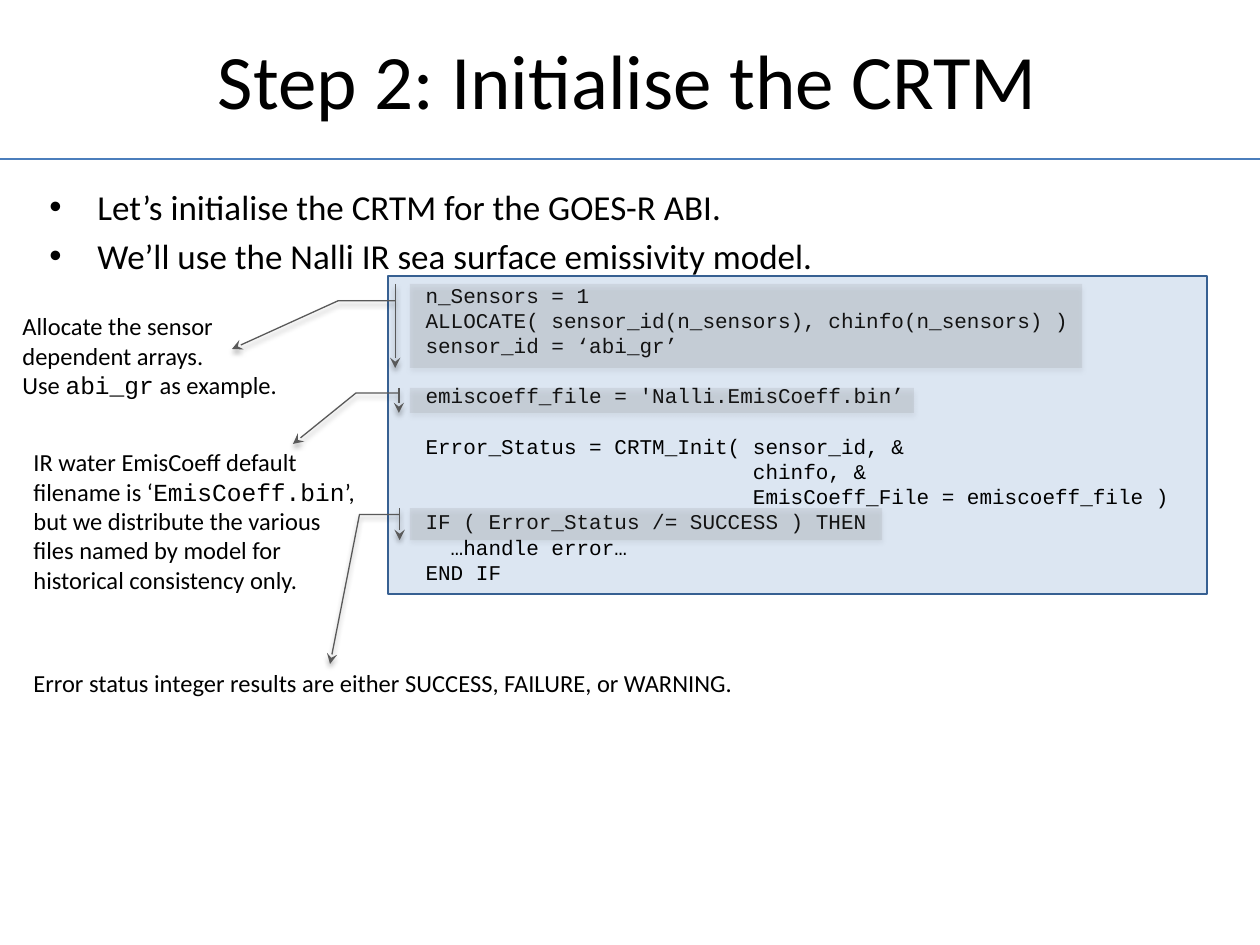
import pptx
import pptx.dml.color
import pptx.enum.shapes
import pptx.enum.text
import pptx.oxml
import pptx.oxml.ns
import pptx.util

SCALE = 914400 / 126
SANS, MONO = "Calibri", "Courier New"
NS = pptx.oxml.ns.nsdecls("a")
SHAPES = pptx.enum.shapes.MSO_SHAPE
ANCHOR = pptx.enum.text.MSO_ANCHOR
ALIGN = pptx.enum.text.PP_ALIGN

CODE = """\
  n_Sensors = 1
  ALLOCATE( sensor_id(n_sensors), chinfo(n_sensors) )
  sensor_id = ‘abi_gr’

  emiscoeff_file = 'Nalli.EmisCoeff.bin’

  Error_Status = CRTM_Init( sensor_id, &
                            chinfo, &
                            EmisCoeff_File = emiscoeff_file )
  IF ( Error_Status /= SUCCESS ) THEN
    …handle error…
  END IF"""
CODE_PITCH = 14.4

BULLETS = [
    "Let’s initialise the CRTM for the GOES-R ABI.",
    "We’ll use the Nalli IR sea surface emissivity model.",
]

NOTES = [
    ((410, 508, 472, 32), (330, 664), (21, 662, 735, 53),
     [[("Error status integer results are either SUCCESS, FAILURE, or WARNING.", SANS)]]),
    ((410, 284, 672, 84), (232, 349), (10, 305, 284, 116),
     [[("Allocate the sensor dependent arrays.", SANS)],
      [("Use ", SANS), ("abi_gr", MONO), (" as example.", SANS)]]),
    ((410, 388, 504, 25), (293, 444), (21, 441, 357, 158),
     [[("IR water EmisCoeff default filename is ‘", SANS), ("EmisCoeff.bin", MONO),
       ("’, but we distribute the various files named by model for historical "
        "consistency only.", SANS)]]),
]


def px(n):
    return pptx.util.Emu(round(n * SCALE))


def color(value):
    return pptx.dml.color.RGBColor.from_string(value)


def add_run(p, text, size, font=SANS):
    r = p.add_run()
    r.text = text
    r.font.size = pptx.util.Pt(size)
    r.font.name = font
    r.font.color.rgb = color("000000")


def next_paragraph(tf, index):
    return tf.add_paragraph() if index else tf.paragraphs[0]


def style_line(line, value, width):
    line.color.rgb = color(value)
    line.width = pptx.util.Pt(width)


def add_textbox(shapes, box):
    tf = shapes.add_textbox(*map(px, box)).text_frame
    tf.word_wrap = True
    return tf


def add_title(s, text):
    sp = s.shapes.title
    sp.left, sp.top, sp.width, sp.height = map(px, (145, 0, 966, 158))
    tf = sp.text_frame
    tf.vertical_anchor = ANCHOR.MIDDLE
    p = tf.paragraphs[0]
    p.alignment = ALIGN.CENTER
    add_run(p, text, 44)


def add_rule(s, y):
    sp = s.shapes.add_connector(
        pptx.enum.shapes.MSO_CONNECTOR.STRAIGHT, px(0), px(y), px(1260), px(y))
    style_line(sp.line, "4B7EBC", 0.75)
    sp._element.spPr.append(pptx.oxml.parse_xml(f"<a:effectLst {NS}/>"))


def add_code(s, box, code):
    sp = s.shapes.add_shape(SHAPES.RECTANGLE, *map(px, box))
    sp.shadow.inherit = False
    sp.fill.solid()
    sp.fill.fore_color.rgb = color("DCE6F2")
    style_line(sp.line, "376092", 1.5)
    tf = sp.text_frame
    tf.word_wrap = True
    tf.vertical_anchor = ANCHOR.TOP
    index = 0
    for block_index, block in enumerate(code.split("\n\n")):
        for line_index, text in enumerate(block.split("\n")):
            p = next_paragraph(tf, index)
            p.alignment = ALIGN.LEFT
            p.line_spacing = pptx.util.Pt(CODE_PITCH)
            if block_index and not line_index:
                p.space_before = pptx.util.Pt(CODE_PITCH)
            add_run(p, text, 12, MONO)
            index += 1


def add_bullets(s, box, items):
    tf = add_textbox(s.shapes, box)
    for index, text in enumerate(items):
        p = next_paragraph(tf, index)
        pPr = p._p.get_or_add_pPr()
        pPr.set("marL", str(px(48)))
        pPr.set("indent", str(px(-48)))
        pPr.append(pptx.oxml.parse_xml(f'<a:buFont {NS} typeface="Arial"/>'))
        pPr.append(pptx.oxml.parse_xml(f'<a:buChar {NS} char="•"/>'))
        if index:
            p.space_before = pptx.util.Pt(4)
        add_run(p, text, 20)


def add_callout(shapes, box, tip):
    x, y, w, h = box
    sp = shapes.add_shape(SHAPES.LINE_CALLOUT_2_ACCENT_BAR, *map(px, box))
    points = (0.2, -0.022, 0.2, -0.107, (tip[1] - y) / h, (tip[0] - x) / w)
    for index, value in enumerate(points):
        sp.adjustments[index] = value
    sp.fill.solid()
    sp.fill.fore_color.rgb = color("808080")
    spPr = sp._element.spPr
    srgb = spPr.find(".//" + pptx.oxml.ns.qn("a:srgbClr"))
    srgb.append(pptx.oxml.parse_xml(f'<a:alpha {NS} val="15000"/>'))
    style_line(sp.line, "595959", 0.75)
    sp.line._get_or_add_ln().append(
        pptx.oxml.parse_xml(f'<a:tailEnd {NS} type="stealth"/>'))
    blur, dist = pptx.util.Pt(3.1), pptx.util.Pt(1.8)
    spPr.append(pptx.oxml.parse_xml(
        f'<a:effectLst {NS}><a:outerShdw blurRad="{blur}" dist="{dist}" dir="5400000" '
        'rotWithShape="0"><a:srgbClr val="000000"><a:alpha val="35000"/></a:srgbClr>'
        '</a:outerShdw></a:effectLst>'))


def add_note(s, box, tip, text_box, paragraphs):
    group = s.shapes.add_group_shape()
    add_callout(group.shapes, box, tip)
    tf = add_textbox(group.shapes, text_box)
    for index, runs in enumerate(paragraphs):
        p = next_paragraph(tf, index)
        for text, font in runs:
            add_run(p, text, 14, font)


def main():
    prs = pptx.Presentation()
    prs.slide_width, prs.slide_height = px(1260), px(945)
    s = prs.slides.add_slide(prs.slide_layouts[5])
    add_rule(s, 159)
    add_title(s, "Step 2: Initialise the CRTM")
    add_code(s, (388, 276, 819, 318), CODE)
    add_bullets(s, (37, 179, 1187, 95), BULLETS)
    for note in NOTES:
        add_note(s, *note)
    prs.save("out.pptx")


if __name__ == "__main__":
    main()
